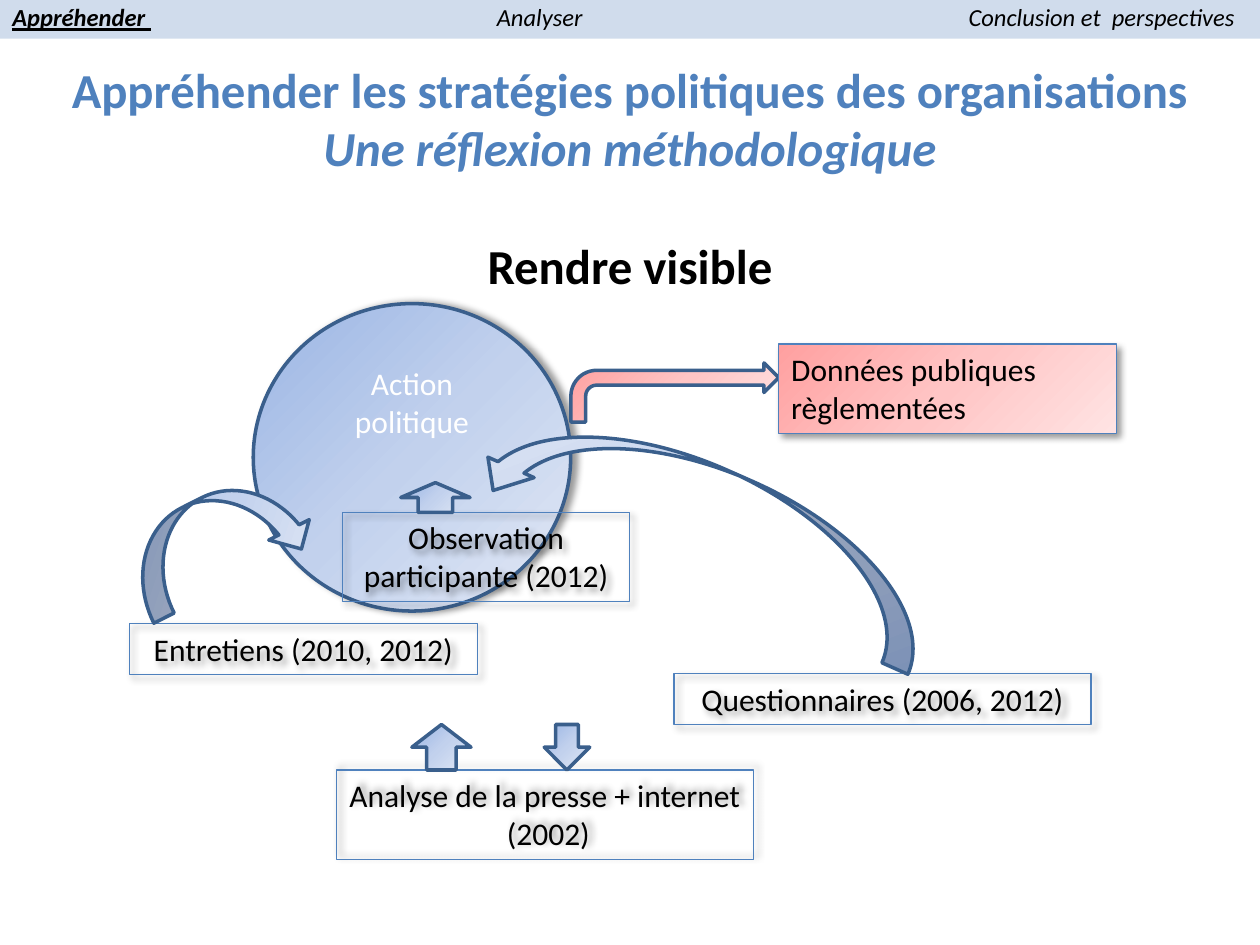
from copy import deepcopy
from dataclasses import dataclass

from lxml import etree
from pptx import Presentation
from pptx.dml.color import RGBColor
from pptx.enum import shapes as sh, text as tx
from pptx.oxml import ns
from pptx.util import Pt


@dataclass(frozen=True)
class Theme:
    font: str = "Calibri"
    title_size: float = 27.9
    body_size: float = 18
    nav_size: float = 14
    accent: str = "4F81BD"
    outline: str = "3A5F8C"
    black: str = "000000"
    white: str = "FFFFFF"
    bar: str = "D0DCEC"
    blues: tuple = ("9AB5E4", "C2D1ED", "E1E8F5")
    reds: tuple = ("FFA0A0", "FFC5C5", "FFE3E3")


theme = Theme()
rgb = RGBColor.from_string


def add_run(paragraph, wording, size, color, bold=False, italic=False):
    run = paragraph.add_run()
    run.text = wording
    font = run.font
    font.name, font.size, font.color.rgb = theme.font, Pt(size), rgb(color)
    font.bold, font.italic = bold, italic
    return run


def add_figure(kind, box, gradient=None, line=theme.outline, width=2, shadow_angle=None):
    figure = slide.shapes.add_shape(kind, *map(Pt, box))
    figure.shadow.inherit = False
    figure.line.color.rgb, figure.line.width = rgb(line), Pt(width)
    if gradient:
        figure.fill.gradient()
        figure.fill.gradient_angle = 315
        stops = figure._element.spPr.find(".//" + ns.qn("a:gsLst"))
        stops.insert(1, deepcopy(stops[0]))
        stops[1].set("pos", "50000")
        for stop, color in zip(figure.fill.gradient_stops, gradient):
            stop.color.rgb = rgb(color)
    else:
        figure.fill.background()
    if shadow_angle is not None:
        effects = figure._element.spPr.find(ns.qn("a:effectLst"))
        shadow = etree.SubElement(effects, ns.qn("a:outerShdw"), blurRad=str(Pt(4)),
                                  dist=str(Pt(3)), dir=str(shadow_angle * 60000),
                                  algn="tl", rotWithShape="0")
        color = etree.SubElement(shadow, ns.qn("a:srgbClr"), val=theme.black)
        etree.SubElement(color, ns.qn("a:alpha"), val="40000")
    return figure


prs = Presentation()
prs.slide_width, prs.slide_height = Pt(720), Pt(540)
slide = prs.slides.add_slide(prs.slide_layouts[6])

# Title and subtitle
heading = slide.shapes.add_textbox(Pt(0), Pt(34), Pt(720), Pt(136)).text_frame
heading.word_wrap = True
heading.margin_top = heading.margin_bottom = 0
heading_lines = [
    ("Appréhender les stratégies politiques des organisations", theme.accent, False, 0),
    ("Une réflexion méthodologique", theme.accent, True, 0),
    ("Rendre visible", theme.black, False, 34),
]
for i, (wording, color, italic, gap) in enumerate(heading_lines):
    paragraph = heading.add_paragraph() if i else heading.paragraphs[0]
    paragraph.alignment = tx.PP_ALIGN.CENTER
    paragraph.space_before = Pt(gap)
    add_run(paragraph, wording, theme.title_size, color, True, italic)

# Navigation bar, with a tab stop for each later section
nav = add_figure(sh.MSO_SHAPE.RECTANGLE, (0, -2.2, 720, 24.3))
nav.fill.solid()
nav.fill.fore_color.rgb = rgb(theme.bar)
nav.line.fill.background()
nav.text_frame.vertical_anchor = tx.MSO_ANCHOR.TOP
sections = nav.text_frame.paragraphs[0]
sections.alignment = tx.PP_ALIGN.LEFT
tabs = etree.SubElement(sections._p.get_or_add_pPr(), ns.qn("a:tabLst"))
for position in (276.8, 546.4):
    etree.SubElement(tabs, ns.qn("a:tab"), pos=str(Pt(position)), algn="l")
current = add_run(sections, "Appréhender ", theme.nav_size, theme.black, True, True)
current.font.underline = True
add_run(sections, "\tAnalyser\tConclusion et  perspectives",
        theme.nav_size, theme.black, italic=True)

# Central circle
action = add_figure(sh.MSO_SHAPE.OVAL, (144.7, 173.5, 181.4, 175.7), theme.blues,
                    shadow_angle=0)
action.text_frame.vertical_anchor = tx.MSO_ANCHOR.TOP
action.text_frame.margin_top = Pt(9)
action.text_frame.paragraphs[0].alignment = tx.PP_ALIGN.CENTER
add_run(action.text_frame.paragraphs[0], "Action politique", theme.body_size, theme.white)

# Arrow towards the public data
add_figure(sh.MSO_SHAPE.BENT_ARROW, (326.2, 207.4, 118.8, 33.8), theme.reds)

# Source boxes
center, left = tx.PP_ALIGN.CENTER, tx.PP_ALIGN.LEFT
sources = [
    ("Données publiques règlementées", (445, 196.6, 193, 51), theme.reds, 45, left),
    ("Analyse de la presse + internet  (2002)", (192.2, 440, 238.3, 51), None, 315, center),
    ("Questionnaires (2006, 2012)", (385.2, 385, 238.3, 29), None, 45, center),
    ("Entretiens (2010, 2012)", (74, 356.4, 198.7, 29), None, 45, center),
    ("Observation participante (2012)", (195.8, 292.7, 164, 51), None, 45, center),
]
for wording, box, gradient, angle, alignment in sources:
    source = add_figure(sh.MSO_SHAPE.RECTANGLE, box, gradient, theme.accent, 0.75, angle)
    source.text_frame.vertical_anchor = tx.MSO_ANCHOR.TOP
    paragraph = source.text_frame.paragraphs[0]
    paragraph.alignment = alignment
    add_run(paragraph, wording, theme.body_size, theme.black)

# Arrows from the sources
arrows = [
    (sh.MSO_SHAPE.CURVED_UP_ARROW, (270, 267.8, 273.6, 64.8), 203.9, (0.25, 0.445, 0.25)),
    (sh.MSO_SHAPE.CURVED_DOWN_ARROW, (70.6, 283, 107.3, 51.8), 333.3, ()),
    (sh.MSO_SHAPE.UP_ARROW, (229, 275.8, 39.6, 17), 0, ()),
    (sh.MSO_SHAPE.UP_ARROW, (235.4, 414, 33.8, 26), 0, ()),
    (sh.MSO_SHAPE.DOWN_ARROW, (311, 414, 26, 26), 0, ()),
]
for kind, box, rotation, adjustments in arrows:
    arrow = add_figure(kind, box, theme.blues)
    arrow.rotation = rotation
    for i, value in enumerate(adjustments):
        arrow.adjustments[i] = value

prs.save("out.pptx")
